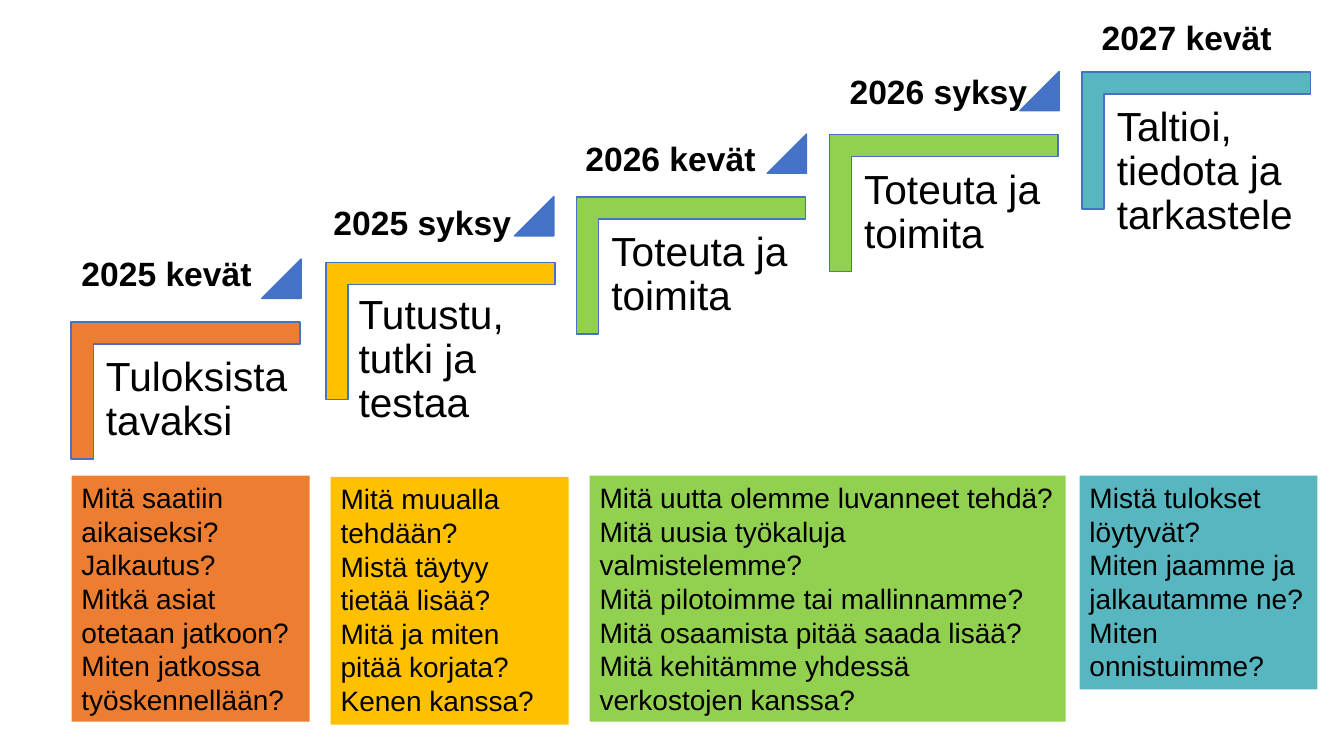
from pptx import Presentation
from pptx.dml.color import RGBColor
from pptx.enum import shapes, text
from pptx.util import Pt

COLORS = {"orange": "ED7D31", "yellow": "FFC000", "green": "92D050",
          "teal": "58B6C0", "blue": "4472C4", "black": "000000"}

# Stairs climb by a fixed step; a nudge shifts a single corner.
FIRST_LEFT, FIRST_TOP = 50.8, 230
STEP_RIGHT, STEP_UP = 180.5, 44.65
CORNER_WIDTH, CORNER_HEIGHT = 163.4, 97.9
TRIANGLE_SIZE = 28.1

STEPS = [
    ("orange", "Tuloksista tavaksi", (0, 0)),
    ("yellow", "Tutustu, tutki ja testaa", (1.6, 2.1)),
    ("green", "Toteuta ja toimita", (0, 0)),
    ("green", "Toteuta ja toimita", (0, 0)),
    ("teal", "Taltioi, tiedota ja tarkastele", (0, 0)),
]

TERMS = [
    ("2025 kevät", 51.1, 177.1, 137.5),
    ("2025 syksy", 231.1, 140.4, 142.6),
    ("2026 kevät", 411.1, 95, 137.5),
    ("2026 syksy", 599.8, 46.8, 142.6),
    ("2027 kevät", 779.8, 8.6, 137.5),
]

CARDS = [
    ("orange", (51.1, 339.8, 170, 175.7),
     ["Mitä saatiin aikaiseksi?\nJalkautus?\nMitkä asiat\notetaan jatkoon?",
      "Miten jatkossa työskennellään?"]),
    ("yellow", (236.2, 340.6, 170, 177.1),
     ["Mitä muualla tehdään?\nMistä täytyy tietää lisää?\n"
      "Mitä ja miten pitää korjata?\nKenen kanssa?"]),
    ("green", (421.2, 339.8, 340, 175.7),
     ["Mitä uutta olemme luvanneet tehdä?\nMitä uusia työkaluja valmistelemme?\n"
      "Mitä pilotoimme tai mallinnamme?\nMitä osaamista pitää saada lisää?\n"
      "Mitä kehitämme yhdessä verkostojen kanssa?"]),
    ("teal", (771.1, 339.8, 170, 152.6),
     ["Mistä tulokset löytyvät?\nMiten jaamme ja jalkautamme ne?",
      "Miten onnistuimme?"]),
]


def set_all(target, values):
    for name, value in values.items():
        setattr(target, name, value)


def paint(fill, color):
    fill.solid()
    fill.fore_color.rgb = RGBColor.from_string(COLORS[color])


def add_text(page, place, paragraphs, font, frame=None, spacing=None):
    """Add a text box; a newline inside a paragraph is a line break."""
    box = page.shapes.add_textbox(*map(Pt, place))
    set_all(box.text_frame, {"word_wrap": True, **(frame or {})})
    for index, wording in enumerate(paragraphs):
        para = (box.text_frame.add_paragraph() if index
                else box.text_frame.paragraphs[0])
        para.text = wording
        para.line_spacing = spacing
        for span in para.runs:
            set_all(span.font, {"name": "Arial", **font})
            span.font.color.rgb = RGBColor.from_string(COLORS["black"])
    return box


def add_preset(page, kind, place, color, adjustments, rotation=0):
    shape = page.shapes.add_shape(kind, *map(Pt, place))
    for index, value in enumerate(adjustments):
        shape.adjustments[index] = value
    shape.rotation = rotation
    shape.shadow.inherit = False
    paint(shape.fill, color)
    paint(shape.line.fill, "blue")
    shape.line.width = Pt(1)


def add_step(page, index, color, wording, nudge):
    left = FIRST_LEFT + STEP_RIGHT * index
    top = FIRST_TOP - STEP_UP * index
    # The corner is turned a quarter, so its sides swap around its centre.
    swap = (CORNER_WIDTH - CORNER_HEIGHT) / 2
    place = (left + nudge[0] + swap, top + nudge[1] - swap,
             CORNER_HEIGHT, CORNER_WIDTH)
    add_preset(page, shapes.MSO_SHAPE.CORNER, place, color, [0.161, 0.161], 90)
    margins = dict.fromkeys(
        ("margin_left", "margin_top", "margin_right", "margin_bottom"), Pt(8.7))
    add_text(page, (left + 16.2, top + 16.2, 147.6, 128.9), [wording],
             {"size": Pt(29)}, margins, 0.9)
    if index < len(STEPS) - 1:
        place = (left + 136.2, top - 45, TRIANGLE_SIZE, TRIANGLE_SIZE)
        add_preset(page, shapes.MSO_SHAPE.ISOSCELES_TRIANGLE, place, "blue", [1])


def main():
    deck = Presentation()
    set_all(deck, {"slide_width": Pt(960), "slide_height": Pt(540)})
    page = deck.slides.add_slide(deck.slide_layouts.get_by_name("Blank"))
    grow = {"auto_size": text.MSO_AUTO_SIZE.SHAPE_TO_FIT_TEXT}

    for index, step in enumerate(STEPS):
        add_step(page, index, *step)
    for wording, left, top, width in TERMS:
        add_text(page, (left, top, width, 36), [wording],
                 {"size": Pt(24), "bold": True}, {**grow, "word_wrap": False})
    for color, place, questions in CARDS:
        card = add_text(page, place, questions, {"size": Pt(20)}, grow)
        paint(card.fill, color)

    deck.save("out.pptx")


if __name__ == "__main__":
    main()
